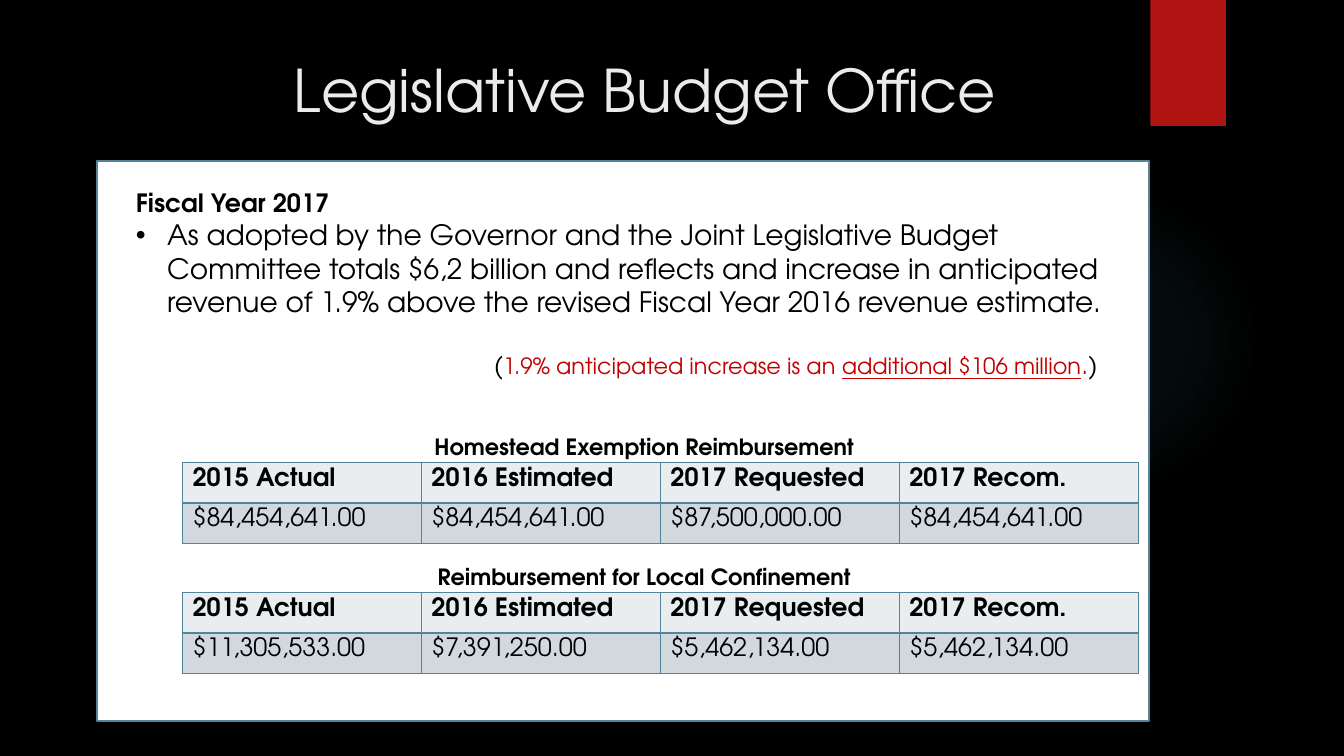
from lxml import etree
from pptx import Presentation, util as u
from pptx.dml.color import RGBColor
from pptx.enum import shapes, text
from pptx.oxml import parse_xml
from pptx.oxml.ns import nsdecls, qn

# Content
TITLE = "Legislative Budget Office"
HEADING = "Fiscal Year 2017"
SUMMARY = (
    "As adopted by the Governor and the Joint Legislative Budget Committee "
    "totals $6,2 billion and reflects and increase in anticipated revenue of "
    "1.9% above the revised Fiscal Year 2016 revenue estimate."
)
# Words, size, colour, underlined
INCREASE_NOTE = [
    ("(", 18, "black", False),
    ("1.9% anticipated increase is an ", 16, "red", False),
    ("additional $106 million", 16, "red", True),
    (".", 18, "red", False),
    (")", 18, "black", False),
]
COLUMN_HEADS = ["2015 Actual", "2016 Estimated", "2017 Requested", "2017 Recom."]
REIMBURSEMENTS = [
    ("Homestead Exemption Reimbursement",
     ["$84,454,641.00", "$84,454,641.00", "$87,500,000.00", "$84,454,641.00"]),
    ("Reimbursement for Local Confinement",
     ["$11,305,533.00", "$7,391,250.00", "$5,462,134.00", "$5,462,134.00"]),
]

# Look and layout, in inches
FONT = "TeX Gyre Adventor"
COLORS = {
    "black": "000000", "white": "FFFFFF", "title": "EBEBEB", "ribbon": "B01513",
    "red": "C00000", "border": "54849A", "head": "E9EDEF", "body": "D1D9DE",
    "glow": "50B9C1",
}
GLOW_STOPS = [(0, 7), (36, 6), (69, 0)]
TABLE_LEFT, COLUMN_WIDTH, ROW_HEIGHT, CELL_MARGIN = 1.81, 2.37, 0.4, 0.05
CAPTION_TOP, CAPTION_TO_TABLE, BLOCK_PITCH = 4.25, 0.34, 1.29

presentation = Presentation()
presentation.slide_width, presentation.slide_height = u.Inches(13.33), u.Inches(7.5)
slide = presentation.slides.add_slide(presentation.slide_layouts[6])


def color(name):
    return RGBColor.from_string(COLORS[name])


def set_font(font, size, name="black", bold=False):
    font.name, font.size, font.bold = FONT, u.Pt(size), bold
    font.color.rgb = color(name)


def add_panel(kind, box, fill=None, line=None):
    shape = slide.shapes.add_shape(kind, *map(u.Inches, box))
    shape.shadow.inherit = False
    if fill:
        shape.fill.solid()
        shape.fill.fore_color.rgb = color(fill)
    if line:
        shape.line.color.rgb = color(line)
        shape.line.width = u.Pt(1.5)
    else:
        shape.line.fill.background()
    return shape


def add_text(box, wrap=True):
    frame = slide.shapes.add_textbox(*map(u.Inches, box)).text_frame
    frame.word_wrap = wrap
    return frame


def add_centered(box, words, size, name="black", bold=False):
    paragraph = add_text(box).paragraphs[0]
    paragraph.text, paragraph.alignment = words, text.PP_ALIGN.CENTER
    set_font(paragraph.font, size, name, bold)


def add_borders(cell):
    properties = cell._tc.get_or_add_tcPr()
    for index, side in enumerate(("lnL", "lnR", "lnT", "lnB")):
        properties.insert(index, parse_xml(
            f'<a:{side} {nsdecls("a")} w="{u.Pt(1)}"><a:solidFill>'
            f'<a:srgbClr val="{COLORS["border"]}"/></a:solidFill></a:{side}>'))


def add_reimbursement(top, caption, amounts):
    add_centered((4, top, 4.78, 0.37), caption, 16, bold=True)
    rows = [COLUMN_HEADS, amounts]
    table = slide.shapes.add_table(
        len(rows), len(COLUMN_HEADS), u.Inches(TABLE_LEFT),
        u.Inches(top + CAPTION_TO_TABLE), u.Inches(COLUMN_WIDTH * len(COLUMN_HEADS)),
        u.Inches(ROW_HEIGHT * len(rows))).table
    for row_index, row in enumerate(rows):
        for column_index, words in enumerate(row):
            cell = table.cell(row_index, column_index)
            cell.margin_top = cell.margin_bottom = u.Inches(CELL_MARGIN)
            cell.vertical_anchor = text.MSO_ANCHOR.TOP
            cell.fill.solid()
            cell.fill.fore_color.rgb = color("body" if row_index else "head")
            add_borders(cell)
            paragraph = cell.text_frame.paragraphs[0]
            paragraph.text = words
            set_font(paragraph.font, 18, bold=row_index == 0)


# Background, glow and ribbon
slide.background.fill.solid()
slide.background.fill.fore_color.rgb = color("black")
glow = add_panel(shapes.MSO_SHAPE.OVAL, (9.41, 1.83, 3.08, 3.08))
stops = "".join(
    f'<a:gs pos="{position * 1000}"><a:srgbClr val="{COLORS["glow"]}">'
    f'<a:alpha val="{alpha * 1000}"/></a:srgbClr></a:gs>'
    for position, alpha in GLOW_STOPS)
glow._element.spPr.find(qn("a:prstGeom")).addnext(parse_xml(
    f'<a:gradFill {nsdecls("a")}><a:gsLst>{stops}</a:gsLst><a:path path="circle">'
    '<a:fillToRect l="50000" t="50000" r="50000" b="50000"/></a:path></a:gradFill>'))
add_panel(shapes.MSO_SHAPE.RECTANGLE, (11.41, 0, 0.75, 1.25), "ribbon")

# Title and white panel
add_centered((1.25, 0.48, 10.29, 1.53), TITLE, 42, "title")
add_panel(shapes.MSO_SHAPE.RECTANGLE, (0.96, 1.6, 10.44, 5.55), "white", "border")

# Fiscal year summary
frame = add_text((1.25, 1.81, 9.84, 1.75))
frame.paragraphs[0].text = HEADING
set_font(frame.paragraphs[0].font, 18, bold=True)
bullet = frame.add_paragraph()
bullet.text = SUMMARY
properties = bullet._p.get_or_add_pPr()
properties.set("marL", str(u.Inches(0.31)))
properties.set("indent", str(-u.Inches(0.31)))
etree.SubElement(properties, qn("a:buFont")).set("typeface", "Arial")
etree.SubElement(properties, qn("a:buChar")).set("char", "•")
set_font(bullet.font, 20)

# Note on the increase
note = add_text((4.8, 3.42, 6.29, 0.4), wrap=False).paragraphs[0]
for words, size, name, underlined in INCREASE_NOTE:
    run = note.add_run()
    run.text = words
    set_font(run.font, size, name)
    run.font.underline = underlined

# Reimbursement tables
for index, (caption, amounts) in enumerate(REIMBURSEMENTS):
    add_reimbursement(CAPTION_TOP + index * BLOCK_PITCH, caption, amounts)

presentation.save("out.pptx")
